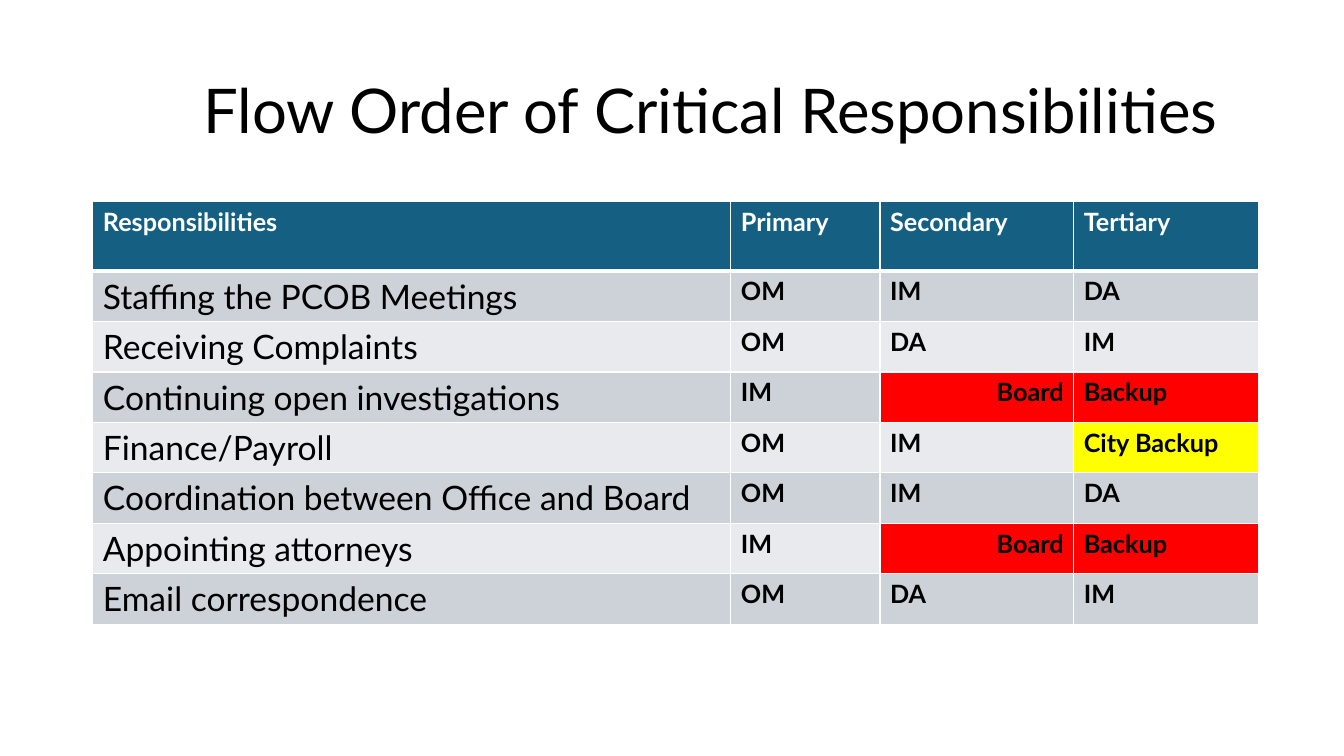
"""Build a slide with a table of critical responsibilities and their backups."""
from lxml.etree import SubElement
from pptx import Presentation
from pptx.dml.color import RGBColor
from pptx.enum.text import MSO_ANCHOR, PP_ALIGN
from pptx.oxml.ns import qn
from pptx.util import Cm, Pt

FONT = "Lato"
BLACK = RGBColor(0x00, 0x00, 0x00)
WHITE = RGBColor(0xFF, 0xFF, 0xFF)
TEAL = RGBColor(0x15, 0x60, 0x82)
BANDS = (RGBColor(0xCC, 0xD2, 0xD8), RGBColor(0xE8, 0xEA, 0xED))
RED = RGBColor(0xFF, 0x00, 0x00)
YELLOW = RGBColor(0xFF, 0xFF, 0x00)
HIGHLIGHTS = {"Board": RED, "Backup": RED, "City Backup": YELLOW}

COLUMN_WIDTHS = (16.08, 3.76, 4.88, 4.65)
HEADER_HEIGHT = 1.75
ROW_HEIGHT = 1.27
ROWS = (
    ("Responsibilities", "Primary", "Secondary", "Tertiary"),
    ("Staffing the PCOB Meetings", "OM", "IM", "DA"),
    ("Receiving Complaints", "OM", "DA", "IM"),
    ("Continuing open investigations", "IM", "Board", "Backup"),
    ("Finance/Payroll", "OM", "IM", "City Backup"),
    ("Coordination between Office and Board", "OM", "IM", "DA"),
    ("Appointing attorneys", "IM", "Board", "Backup"),
    ("Email correspondence", "OM", "DA", "IM"),
)


def add_span(para, text, size, color, bold=False):
    """Add one formatted run to a paragraph."""
    span = para.add_run()
    span.text = text
    span.font.name = FONT
    span.font.size = Pt(size)
    span.font.bold = bold
    span.font.color.rgb = color


def set_title(page, text):
    """Place and format the title placeholder."""
    title = page.shapes.title
    title.left, title.top = Cm(2.34), Cm(1.02)
    title.width, title.height = Cm(29.51), Cm(3.68)
    frame = title.text_frame
    frame.word_wrap = True
    frame.vertical_anchor = MSO_ANCHOR.MIDDLE
    frame.margin_left = Cm(2.79)
    para = frame.paragraphs[0]
    para.alignment = PP_ALIGN.LEFT
    para.line_spacing = 0.9
    add_span(para, text, 44, BLACK)


def set_borders(cell, top, bottom):
    """Draw white cell borders, with the top and bottom widths in points."""
    properties = cell._tc.get_or_add_tcPr()
    for side, width in (("L", 1), ("R", 1), ("T", top), ("B", bottom)):
        line = SubElement(properties, qn(f"a:ln{side}"), w=str(Pt(width)))
        fill = SubElement(line, qn("a:solidFill"))
        SubElement(fill, qn("a:srgbClr"), val=str(WHITE))


def fill_cell(cell, text, row, column):
    """Write and format one cell according to its place and text."""
    is_header = row == 0
    is_task = column == 0 and not is_header
    set_borders(cell, 3 if row == 1 else 1, 3 if is_header else 1)
    cell.fill.solid()
    band = TEAL if is_header else BANDS[(row - 1) % 2]
    cell.fill.fore_color.rgb = HIGHLIGHTS.get(text, band)
    para = cell.text_frame.paragraphs[0]
    para.alignment = PP_ALIGN.RIGHT if text == "Board" else PP_ALIGN.LEFT
    color = WHITE if is_header else BLACK
    add_span(para, text, 24 if is_task else 18, color, bold=not is_task)


def add_responsibilities(page):
    """Add the table of responsibilities."""
    height = HEADER_HEIGHT + ROW_HEIGHT * (len(ROWS) - 1)
    table = page.shapes.add_table(
        len(ROWS), len(COLUMN_WIDTHS), Cm(2.34), Cm(5.08),
        Cm(sum(COLUMN_WIDTHS)), Cm(height),
    ).table
    for column, width in zip(table.columns, COLUMN_WIDTHS):
        column.width = Cm(width)
    for row, texts in enumerate(ROWS):
        table.rows[row].height = Cm(ROW_HEIGHT if row else HEADER_HEIGHT)
        for column, text in enumerate(texts):
            fill_cell(table.cell(row, column), text, row, column)


def main():
    """Build and save the deck."""
    deck = Presentation()
    deck.slide_width, deck.slide_height = Cm(33.87), Cm(19.05)
    page = deck.slides.add_slide(deck.slide_layouts[5])
    set_title(page, "Flow Order of Critical Responsibilities")
    add_responsibilities(page)
    deck.save("out.pptx")


if __name__ == "__main__":
    main()
